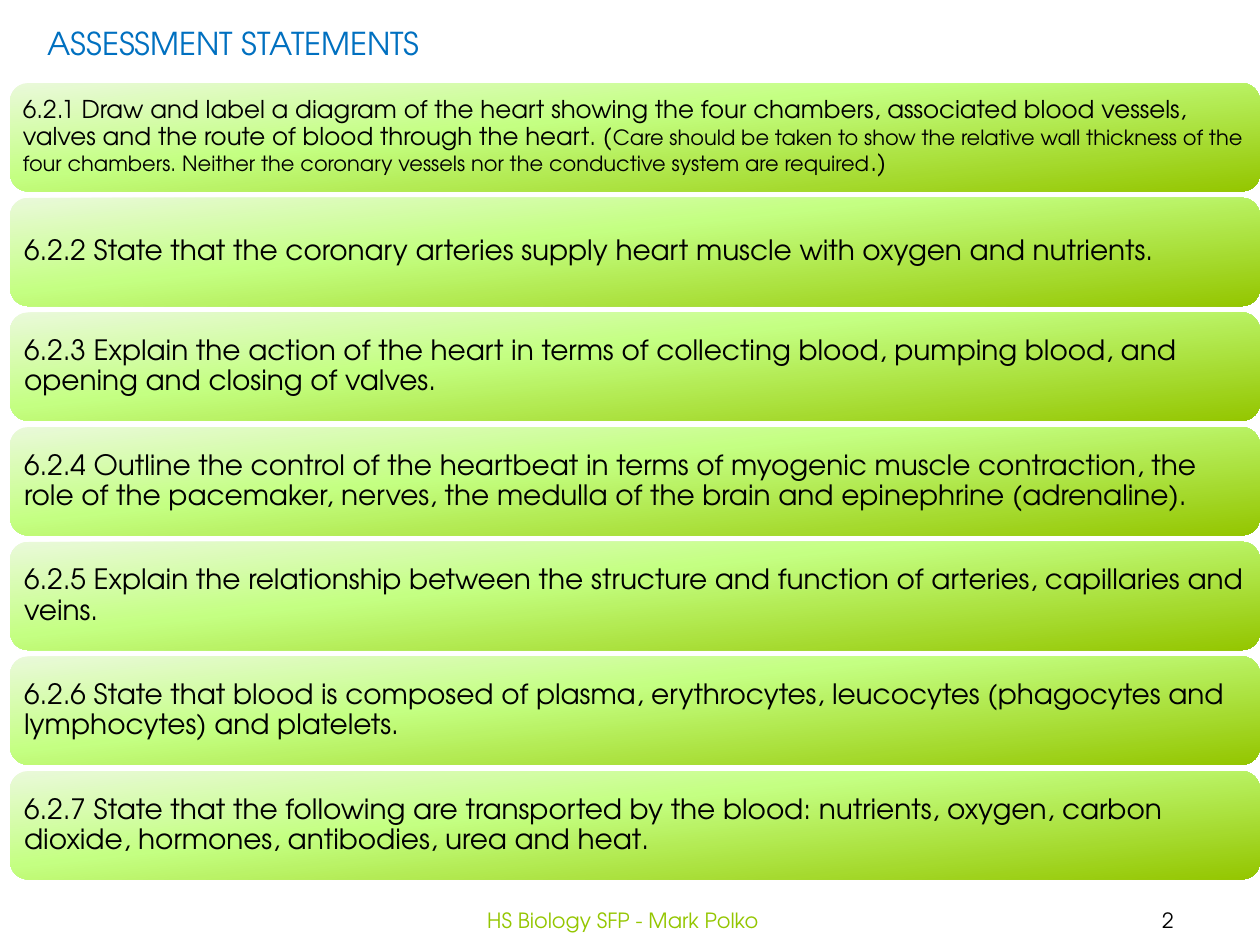
from copy import deepcopy
from pptx import Presentation, util as u
from pptx.dml.color import RGBColor
from pptx.enum import shapes, text

FONT = "TeX Gyre Adventor"
HUES = {"pale": "EAF9DA", "lime": "C4FF82", "leaf": "94C600",
        "head": "0070C0", "ink": "000000"}
FADE = [("pale", 0), ("lime", 0.4), ("leaf", 1)]
LEFT, TOP, WIDE, HIGH, STEP = 0.08, 0.66, 9.92, 0.86, 0.91
GOALS = [
    [("6.2.1 Draw and label a diagram of the heart showing the four chambers, "
      "associated blood vessels, valves and the route of blood through the heart. (", 14),
     ("Care should be taken to show the relative wall thickness of the four chambers. "
      "Neither the coronary vessels nor the conductive system are required", 12),
     (".)", 14)],
    [("6.2.2 State that the coronary arteries supply heart muscle with oxygen "
      "and nutrients.", 16)],
    [("6.2.3 Explain the action of the heart in terms of collecting blood, "
      "pumping blood, and opening and closing of valves.", 16)],
    [("6.2.4 Outline the control of the heartbeat in terms of myogenic muscle "
      "contraction, the role of the pacemaker, nerves, the medulla of the brain "
      "and epinephrine (adrenaline).", 16)],
    [("6.2.5 Explain the relationship between the structure and function of "
      "arteries, capillaries and veins.", 16)],
    [("6.2.6 State that blood is composed of plasma, erythrocytes, leucocytes "
      "(phagocytes and lymphocytes) and platelets.", 16)],
    [("6.2.7 State that the following are transported by the blood: nutrients, "
      "oxygen, carbon dioxide, hormones, antibodies, urea and heat.", 16)],
]


def style(font, size, hue):
    """Set the face, size and colour of a font."""
    font.name, font.size = FONT, u.Pt(size)
    font.color.rgb = RGBColor.from_string(HUES[hue])


def label(slide, box, words, size, hue, wrap=True):
    """Add a one-line text box and return its frame."""
    frame = slide.shapes.add_textbox(*map(u.Inches, box)).text_frame
    frame.word_wrap = wrap
    frame.text = words
    style(frame.paragraphs[0].runs[0].font, size, hue)
    return frame


def foot(slide, box, words, hue):
    """Add a centred footer item."""
    frame = label(slide, box, words, 12, hue)
    frame.vertical_anchor = text.MSO_ANCHOR.MIDDLE
    frame.paragraphs[0].alignment = text.PP_ALIGN.CENTER


def shade(fill):
    """Fill with the three-stop green gradient."""
    fill.gradient()
    fill.gradient_angle = 276
    last = fill.gradient_stops[1]._gs
    last.addnext(deepcopy(last))
    for stop, (hue, place) in zip(fill.gradient_stops, FADE):
        stop.color.rgb = RGBColor.from_string(HUES[hue])
        stop.position = place


def bar(slide, row, parts):
    """Add one rounded bar holding an assessment statement."""
    box = map(u.Inches, (LEFT, TOP + row * STEP, WIDE, HIGH))
    shape = slide.shapes.add_shape(shapes.MSO_SHAPE.ROUNDED_RECTANGLE, *box)
    shape.shadow.inherit = False
    shape.line.fill.background()
    shade(shape.fill)
    frame = shape.text_frame
    frame.word_wrap = True
    frame.vertical_anchor = text.MSO_ANCHOR.MIDDLE
    pad = u.Inches(0.06 if len(parts) > 1 else 0.07)
    frame.margin_left = frame.margin_right = pad
    frame.margin_top = frame.margin_bottom = pad
    para = frame.paragraphs[0]
    para.alignment = text.PP_ALIGN.LEFT
    para.line_spacing = 0.9
    for words, size in parts:
        run = para.add_run()
        run.text = words
        style(run.font, size, "ink")


def main():
    """Build and save the slide."""
    deck = Presentation()
    deck.slide_width, deck.slide_height = u.Inches(10), u.Inches(7.5)
    slide = deck.slides.add_slide(deck.slide_layouts[6])
    foot(slide, (8.54, 7.1, 1.46, 0.4), "2", "ink")
    foot(slide, (3.03, 7.1, 3.83, 0.4), "HS Biology SFP - Mark Polko", "leaf")
    label(slide, (0.28, 0.14, 3.21, 0.71), "ASSESSMENT STATEMENTS", 18, "head", False)
    for row, parts in enumerate(GOALS):
        bar(slide, row, parts)
    deck.save("out.pptx")


if __name__ == "__main__":
    main()
